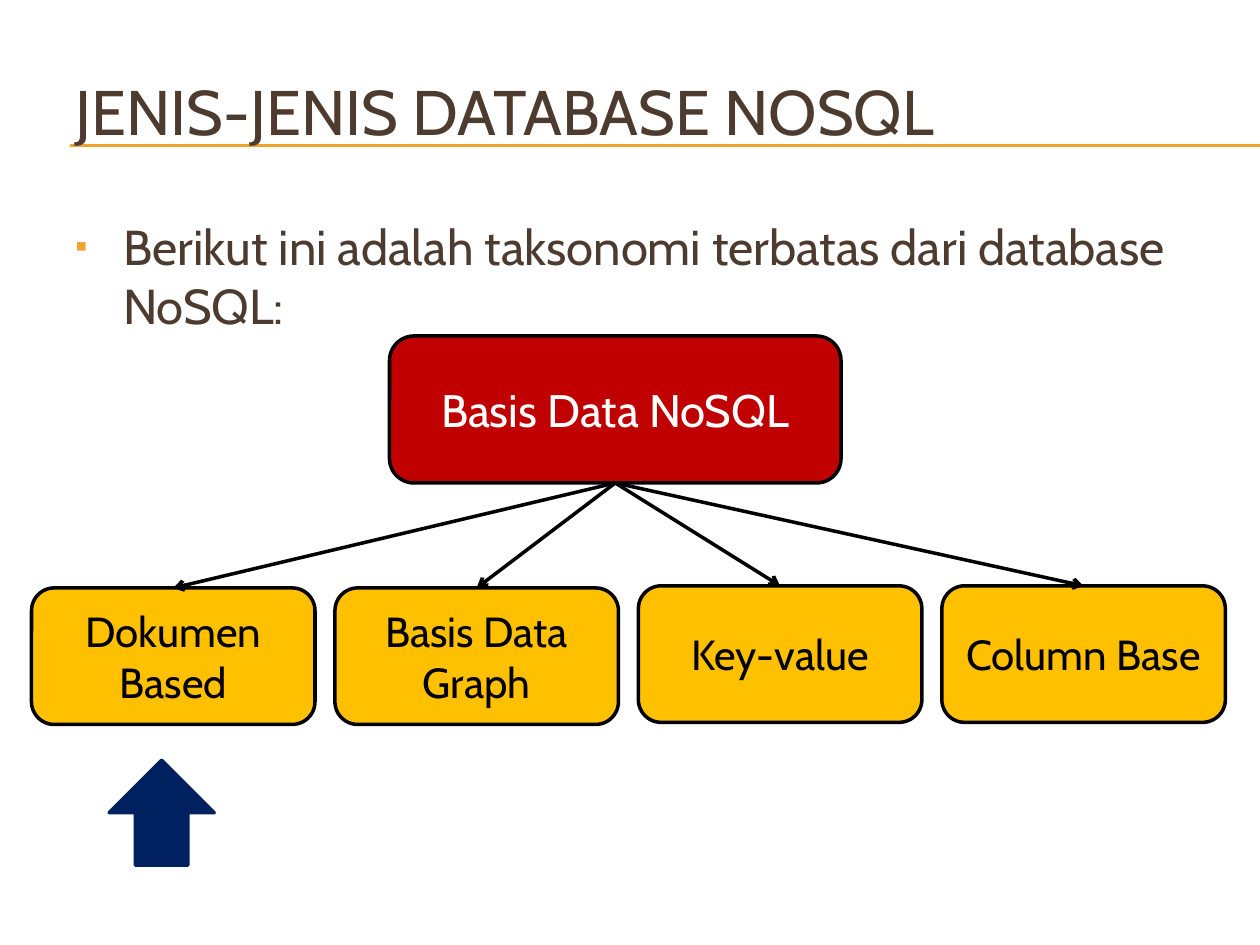
from lxml import etree
from pptx import Presentation
from pptx import util as u
from pptx.dml.color import RGBColor
from pptx.enum import shapes, text
from pptx.oxml.ns import qn

COLORS = {
    "title": "4E3B30", "accent": "F0A22E", "root": "C00000", "kind": "FFC000",
    "marker": "002060", "black": "000000", "white": "FFFFFF",
}
FONT = "Cabin"
COLS, ROWS = 120, 90

prs = Presentation()
prs.slide_width, prs.slide_height = u.Inches(10), u.Inches(7.5)


def rgb(name):
    return RGBColor.from_string(COLORS[name])


def grid(x, y, *size):
    w, h = prs.slide_width / COLS, prs.slide_height / ROWS
    return [round(n * unit) for n, unit in zip((x, y, *size), (w, h, w, h))]


def write(tf, words, size, color, align, anchor):
    tf.word_wrap = True
    tf.auto_size = text.MSO_AUTO_SIZE.NONE
    tf.vertical_anchor = anchor
    p = tf.paragraphs[0]
    p.alignment = align
    r = p.add_run()
    r.text = words
    r.font.name, r.font.size = FONT, u.Pt(size)
    r.font.color.rgb = rgb(color)
    return p


def add_line(s, start, end, color, width):
    line = s.shapes.add_connector(shapes.MSO_CONNECTOR.STRAIGHT, *start, *end)
    line.line.color.rgb = rgb(color)
    line.line.width = u.Pt(width)
    etree.SubElement(line._element.spPr, qn("a:effectLst"))
    return line


def add_block(s, preset, box, fill, outline):
    sp = s.shapes.add_shape(preset, *grid(*box))
    sp.shadow.inherit = False
    sp.fill.solid()
    sp.fill.fore_color.rgb = rgb(fill)
    sp.line.color.rgb = rgb(outline)
    sp.line.width = u.Pt(2)
    return sp


def add_node(s, box, words, size, fill, color):
    sp = add_block(s, shapes.MSO_SHAPE.ROUNDED_RECTANGLE, box, fill, "black")
    write(sp.text_frame, words, size, color, text.PP_ALIGN.CENTER, text.MSO_ANCHOR.MIDDLE)
    return sp


def add_title(s, box, words):
    title = s.shapes.title
    title.left, title.top, title.width, title.height = grid(*box)
    write(title.text_frame, words, 36, "title", text.PP_ALIGN.LEFT, text.MSO_ANCHOR.MIDDLE)
    x, y, _, height = box
    for share in (0.72, 0.73):
        row = y + share * height
        rule = add_line(s, grid(x + 0.7, row), grid(COLS, row), "accent", 0.75)
        title._element.addprevious(rule._element)


def add_intro(s, box, words):
    tf = s.shapes.add_textbox(*grid(*box)).text_frame
    p = write(tf, words, 28, "title", text.PP_ALIGN.LEFT, text.MSO_ANCHOR.TOP)
    p.space_before = u.Pt(2)
    pPr = p._p.get_or_add_pPr()
    indent = u.Inches(0.38)
    pPr.set("marL", str(indent))
    pPr.set("indent", str(-indent))
    color = etree.SubElement(pPr, qn("a:buClr"))
    etree.SubElement(color, qn("a:srgbClr"), val=COLORS["accent"])
    etree.SubElement(pPr, qn("a:buSzPct"), val="70000")
    etree.SubElement(pPr, qn("a:buFont"), typeface="Arial")
    etree.SubElement(pPr, qn("a:buChar"), char="▪")


def add_taxonomy(s, box, root_words, kinds):
    x, y, width, height = box
    root = add_node(s, (x + 34.1, y, 43, 14), root_words, 26, "root", "white")
    node_w, node_h = 27, 13
    pitch = (width - node_w) / (len(kinds) - 1)
    nodes = []
    for i, words in enumerate(kinds):
        lift = 0 if i < len(kinds) / 2 else 0.2
        node_box = (x + i * pitch, y + height - node_h - lift, node_w, node_h)
        nodes.append(add_node(s, node_box, words, 24, "kind", "black"))
    for node in nodes:
        arrow = add_line(s, (0, 0), (0, 0), "black", 2)
        arrow.begin_connect(root, 2)
        arrow.end_connect(node, 0)
        etree.SubElement(arrow.line._get_or_add_ln(), qn("a:tailEnd"), type="arrow")


def main():
    s = prs.slides.add_slide(prs.slide_layouts[5])
    add_title(s, (6, 3, 108, 15), "JENIS-JENIS DATABASE NOSQL")
    add_intro(s, (6, 20, 111, 69), "Berikut ini adalah taksonomi terbatas dari database NoSQL:")
    add_taxonomy(s, (3, 32, 113.7, 37), "Basis Data NoSQL",
                 ["Dokumen Based", "Basis Data Graph", "Key-value", "Column Base"])
    add_block(s, shapes.MSO_SHAPE.UP_ARROW, (10.4, 72.4, 10, 10), "marker", "marker")
    prs.save("out.pptx")


if __name__ == "__main__":
    main()
